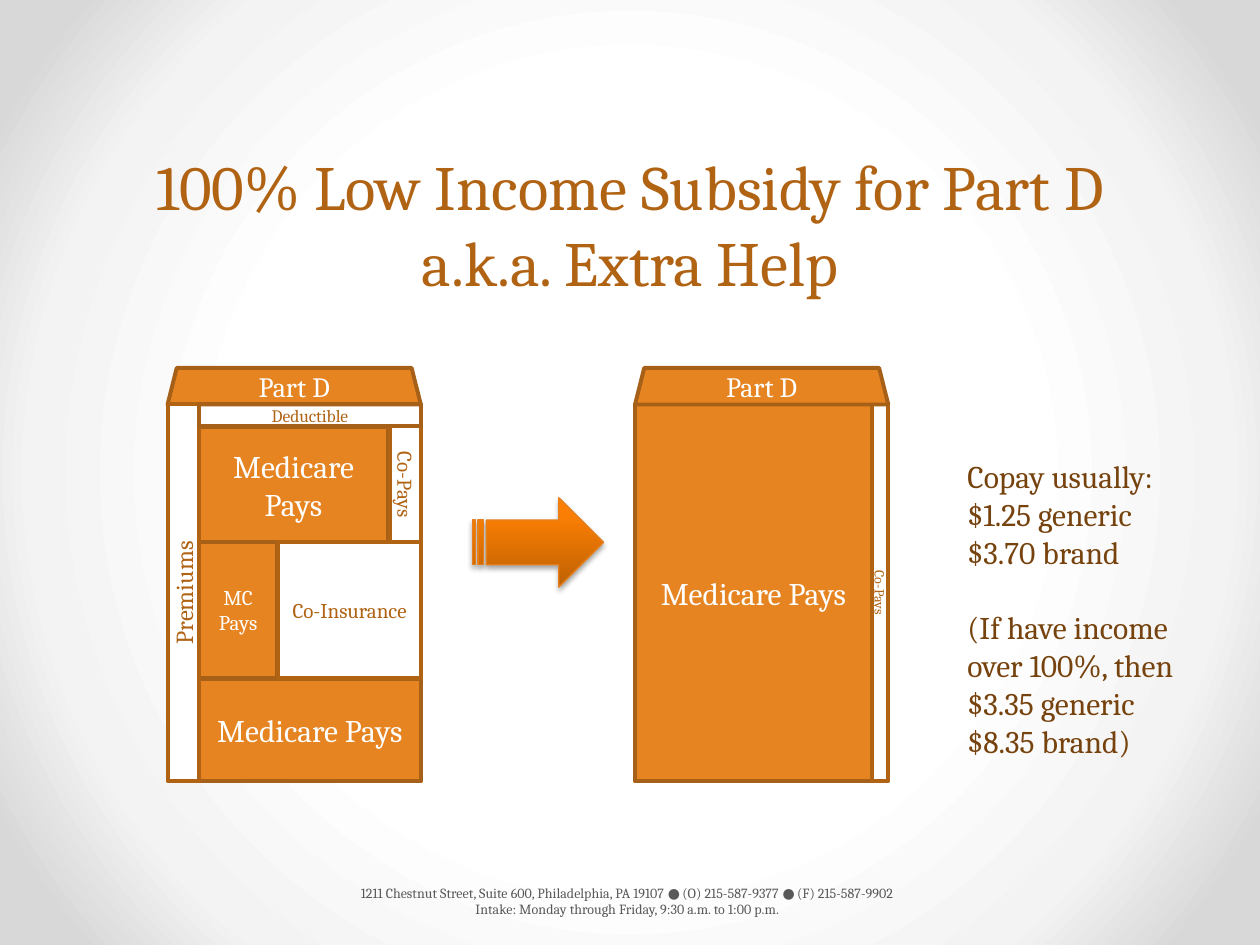
import pptx
import pptx.util
import pptx.oxml
import pptx.oxml.ns
import pptx.dml.color
import pptx.enum.shapes
import pptx.enum.text

Inches, Pt = pptx.util.Inches, pptx.util.Pt
RGB = pptx.dml.color.RGBColor.from_string
KIND = pptx.enum.shapes.MSO_SHAPE
ALIGN = pptx.enum.text.PP_ALIGN
ANCHOR = pptx.enum.text.MSO_ANCHOR
DRAW = pptx.oxml.ns.nsdecls("a")
FONT = "Cambria"
COLOR = {
    "white": "FFFFFF", "orange": "E68422", "edge": "A76018", "rust": "B16314",
    "brown": "76420D", "gray": "595959", "rim": "E47F1C",
}


def write(shape, text, size, color, align=ALIGN.CENTER, anchor=ANCHOR.MIDDLE):
    frame = shape.text_frame
    frame.word_wrap = True
    frame.vertical_anchor = anchor
    frame.text = text
    for para in frame.paragraphs:
        para.alignment = align
        for run in para.runs:
            run.font.name = FONT
            run.font.size = Pt(size)
            run.font.color.rgb = RGB(COLOR[color])


def blend(root, stops, shade):
    """Replace the gradient under root with the given stops and direction."""
    old = root.find(".//" + pptx.oxml.ns.qn("a:gradFill"))
    marks = "".join(
        f'<a:gs pos="{pos * 1000}"><a:srgbClr val="{tone}"/></a:gs>'
        for pos, tone in stops)
    new = pptx.oxml.parse_xml(
        f'<a:gradFill {DRAW} rotWithShape="1"><a:gsLst>{marks}</a:gsLst>{shade}</a:gradFill>')
    old.getparent().replace(old, new)


deck = pptx.Presentation()
deck.slide_width, deck.slide_height = Inches(10), Inches(7.5)
slide = deck.slides.add_slide(deck.slide_layouts[6])

# Background: white centre fading to gray corners
slide.background.fill.gradient()
blend(
    slide.element,
    [(0, "FFFFFF"), (50, "FFFFFF"), (76, "F3F3F3"), (92, "D8D8D8"), (100, "D8D8D8")],
    '<a:path path="circle"><a:fillToRect l="50000" t="50000" r="50000" b="50000"/></a:path>')

# Title and footer
title = slide.shapes.add_textbox(Inches(0.5), Inches(1.25), Inches(9), Inches(1.17))
write(title, "100% Low Income Subsidy for Part D\va.k.a. Extra Help", 36, "rust",
      anchor=ANCHOR.BOTTOM)

foot = slide.shapes.add_textbox(Inches(0.51), Inches(6.95), Inches(8.99), Inches(0.4))
foot.text_frame.margin_left = Inches(0.05)
write(foot, "1211 Chestnut Street, Suite 600, Philadelphia, PA 19107 ● (O) 215-587-9377"
      " ● (F) 215-587-9902\nIntake: Monday through Friday, 9:30 a.m. to 1:00 p.m.", 8, "gray")

# Part D houses: text, size, left, top, width, height, turn, fill, line, font colour
PAID = ("orange", "edge", "white")
OWED = ("white", "rust", "rust")
OPEN = (None, "edge", "rust")
before = [
    ("Medicare Pays", 18, 1.58, 3.39, 1.5, 0.92, 0, PAID),
    ("MC\nPays", 12, 1.58, 4.3, 0.62, 1.08, 0, PAID),
    ("Medicare Pays", 18, 1.58, 5.39, 1.76, 0.81, 0, PAID),
    ("Co-Insurance", 12, 2.21, 4.3, 1.13, 1.08, 0, OWED),
    ("Co-Pays", 12, 2.76, 3.72, 0.92, 0.25, 90, OWED),
    ("Part D", 16, 1.33, 2.92, 2.01, 0.29, 0, PAID),
    ("Premiums", 14, -0.04, 4.58, 2.99, 0.25, 270, OWED),
    ("Deductible", 10, 1.58, 3.21, 1.76, 0.17, 0, OPEN),
]
after = [
    ("Medicare Pays", 18, 5.04, 3.21, 1.88, 2.99, 0, PAID),
    ("Co-Pays", 8, 5.49, 4.64, 2.99, 0.13, 90, OWED),
    ("Part D", 16, 5.04, 2.92, 2.01, 0.29, 0, PAID),
]
for house in (before, after):
    group = slide.shapes.add_group_shape()
    for text, size, left, top, width, height, turn, (fill, line, ink) in house:
        roof = text == "Part D"
        kind = KIND.TRAPEZOID if roof else KIND.ROUND_2_SAME_RECTANGLE
        part = group.shapes.add_shape(
            kind, Inches(left), Inches(top), Inches(width), Inches(height))
        part.adjustments[0] = 0.25 if roof else 0
        part.rotation = turn
        part.shadow.inherit = False
        if fill:
            part.fill.solid()
            part.fill.fore_color.rgb = RGB(COLOR[fill])
        else:
            part.fill.background()
        part.line.color.rgb = RGB(COLOR[line])
        part.line.width = Pt(2.25)
        write(part, text, size, ink)

# Arrow between the houses
arrow = slide.shapes.add_shape(
    KIND.STRIPED_RIGHT_ARROW, Inches(3.75), Inches(3.95), Inches(1.04), Inches(0.71))
arrow.fill.gradient()
blend(arrow.element, [(0, "BE6103"), (80, "FA7E03"), (100, "FF8000")],
      '<a:lin ang="16200000" scaled="0"/>')
arrow.line.color.rgb = RGB(COLOR["rim"])
arrow.line.width = Pt(0.75)
arrow.shadow.inherit = False
glow = arrow.element.spPr.find(pptx.oxml.ns.qn("a:effectLst"))
glow.append(pptx.oxml.parse_xml(
    f'<a:outerShdw {DRAW} blurRad="{Pt(3.1)}" dist="{Pt(1.8)}" dir="5400000" rotWithShape="0">'
    '<a:srgbClr val="000000"><a:alpha val="35000"/></a:srgbClr></a:outerShdw>'))

# Copay amounts
note = slide.shapes.add_textbox(Inches(7.58), Inches(3.58), Inches(2.08), Inches(2.52))
write(note, "Copay usually:\n$1.25 generic\n$3.70 brand\n(If have income over 100%, then\n"
      "$3.35 generic\n$8.35 brand)", 18, "brown", ALIGN.LEFT, ANCHOR.TOP)
note.text_frame.paragraphs[3].space_before = Pt(21.5)

deck.save("out.pptx")
